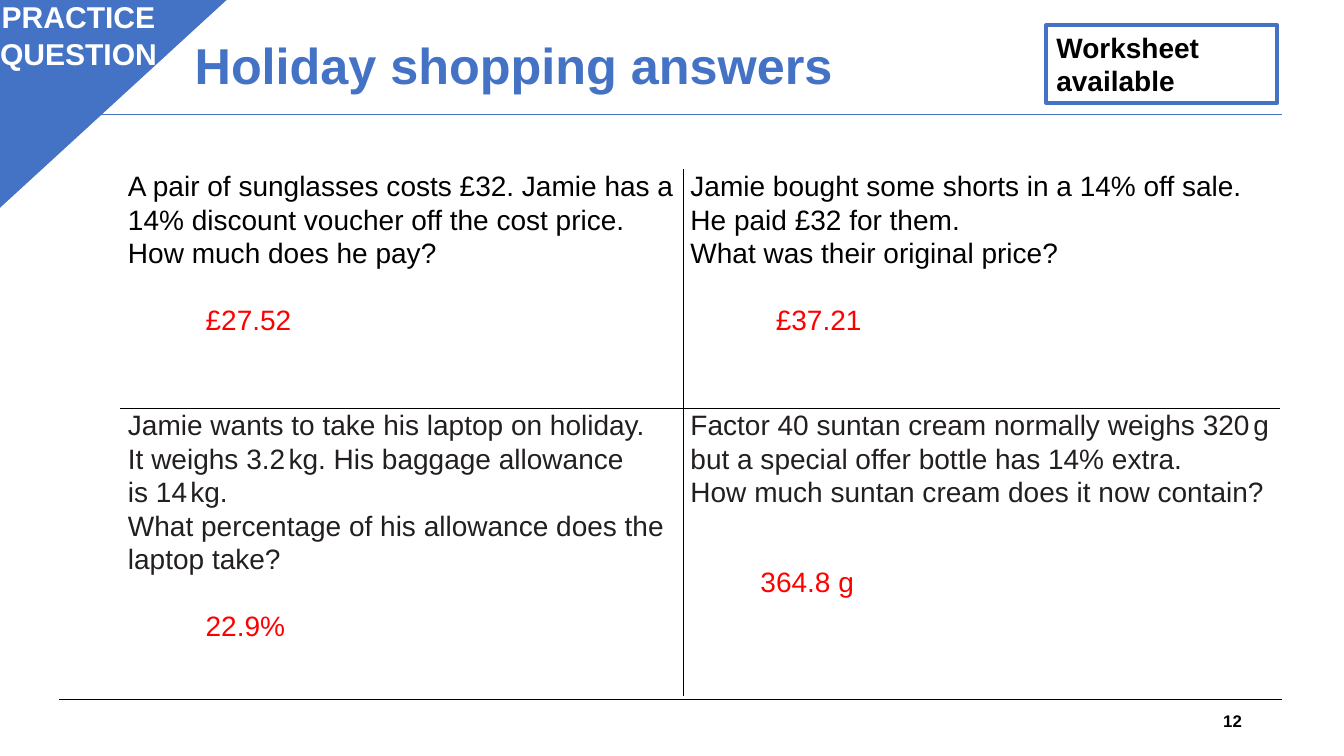
from lxml import etree
from pptx import Presentation
from pptx import util as u
from pptx.dml import color
from pptx.enum import shapes, text
from pptx.oxml import ns

COLORS = {"blue": "4472C4", "black": "000000", "ink": "231F20",
          "answer": "FF0000", "white": "FFFFFF"}
ALIGN = text.PP_ALIGN
ANCHOR = text.MSO_ANCHOR

# Per question: colour, paragraphs, answer, answer indent, space above answer
# "_" marks the narrow gap between a number and its unit
QUESTIONS = [
    [("black", ["A pair of sunglasses costs £32. Jamie has a 14% discount "
                "voucher off the cost price.",
                "How much does he pay?"], "£27.52", 55.5, 24),
     ("black", ["Jamie bought some shorts in a 14% off sale. He paid £32 for them.",
                "What was their original price?"], "£37.21", 61, 24)],
    [("ink", ["Jamie wants to take his laptop on holiday.",
              "It weighs 3.2_kg. His baggage allowance\nis 14_kg.",
              "What percentage of his allowance does the laptop take?"],
      "22.9%", 55.5, 24),
     ("ink", ["Factor 40 suntan cream normally weighs 320_g but a special "
              "offer bottle has 14% extra.",
              "How much suntan cream does it now contain?"], "364.8 g", 50, 40)],
]


class PracticeSlide:
    font = "Arial"

    def __init__(self, deck):
        self.slide = deck.slides.add_slide(deck.slide_layouts[5])
        self.shapes = self.slide.shapes

    def rgb(self, name):
        return color.RGBColor.from_string(COLORS[name])

    def style(self, run, size, name, bold=False):
        run.font.name = self.font
        run.font.size = u.Pt(size)
        run.font.bold = bold
        run.font.color.rgb = self.rgb(name)

    def wording(self, shape, words, size, name, align=ALIGN.LEFT, anchor=ANCHOR.TOP):
        frame = shape.text_frame
        frame.word_wrap = True
        frame.vertical_anchor = anchor
        frame.text = words
        for line in frame.paragraphs:
            line.alignment = align
            for run in line.runs:
                self.style(run, size, name, bold=True)

    def title(self, words, box):
        heading = self.shapes.title
        heading.left, heading.top, heading.width, heading.height = map(u.Pt, box)
        self.wording(heading, words, 36, "blue", anchor=ANCHOR.MIDDLE)
        heading.text_frame.paragraphs[0].line_spacing = 0.9

    def label(self, words, box, size, name, align, anchor=ANCHOR.TOP):
        note = self.shapes.add_textbox(*map(u.Pt, box))
        self.wording(note, words, size, name, align, anchor)

    def rule(self, left, right, y, name):
        line = self.shapes.add_connector(shapes.MSO_CONNECTOR.STRAIGHT,
                                         *map(u.Pt, (left, y, right, y)))
        line.line.color.rgb = self.rgb(name)
        line.line.width = u.Pt(0.75)
        etree.SubElement(line._element.spPr, ns.qn("a:effectLst"))

    def panel(self, kind, box, width, fill=None):
        panel = self.shapes.add_shape(kind, *map(u.Pt, box))
        panel.shadow.inherit = False
        if fill:
            panel.fill.solid()
            panel.fill.fore_color.rgb = self.rgb(fill)
        else:
            panel.fill.background()
        panel.line.color.rgb = self.rgb("blue")
        panel.line.width = u.Pt(width)
        return panel

    def corner(self, box):
        flag = self.panel(shapes.MSO_SHAPE.ISOSCELES_TRIANGLE, box, 1, "blue")
        flag.adjustments[0] = 0
        flag._element.spPr.find(ns.qn("a:xfrm")).set("flipV", "1")

    def border(self, cell, sides):
        props = cell._tc.get_or_add_tcPr()
        for place, side in enumerate(sides):
            edge = etree.Element(ns.qn(f"a:ln{side}"), w=str(u.Pt(1)))
            fill = etree.SubElement(edge, ns.qn("a:solidFill"))
            etree.SubElement(fill, ns.qn("a:srgbClr"), val=COLORS["black"])
            props.insert(place, edge)

    def question(self, cell, name, lines, answer, indent, gap):
        cell.fill.background()
        cell.margin_left = cell.margin_right = u.Pt(5)
        cell.margin_top = cell.margin_bottom = 0
        frame = cell.text_frame
        for number, words in enumerate(lines + [answer]):
            line = frame.add_paragraph() if number else frame.paragraphs[0]
            line.line_spacing = 1.07
            self.spaced_units(line, words)
            for run in line.runs:
                self.style(run, 8 if run.text == " " else 20, name)
        # The last paragraph is the answer
        self.style(line.runs[0], 20, "answer")
        line.space_before = u.Pt(gap)
        props = line._p.get_or_add_pPr()
        props.set("marL", str(u.Pt(indent)))
        props.set("indent", "0")

    def spaced_units(self, line, words):
        for row, part in enumerate(words.split("\n")):
            if row:
                line.add_line_break()
            for piece in part.replace("_", "_ _").split("_"):
                line.add_run().text = piece

    def grid(self, questions, left, top, widths, heights):
        box = (left, top, sum(widths), sum(heights))
        table = self.shapes.add_table(len(heights), len(widths),
                                      *map(u.Pt, box)).table
        table.first_row = table.horz_banding = False
        for column, width in zip(table.columns, widths):
            column.width = u.Pt(width)
        for row, height in zip(table.rows, heights):
            row.height = u.Pt(height)
        for r, entries in enumerate(questions):
            for c, entry in enumerate(entries):
                cell = table.cell(r, c)
                self.question(cell, *entry)
                # Only the inner edges are ruled
                self.border(cell, ("L" if c else "R", "T" if r else "B"))


def main():
    deck = Presentation()
    deck.slide_width, deck.slide_height = u.Pt(960), u.Pt(540)
    page = PracticeSlide(deck)

    # Header and footer
    page.rule(42.5, 916, 499.7, "black")
    page.rule(42.5, 916, 82, "blue")
    page.title("Holiday shopping answers", (131.8, 8.6, 720, 80))
    page.label("12", (678.2, 500.4, 216, 28.8), 12, "black",
               ALIGN.RIGHT, ANCHOR.MIDDLE)

    # Corner flag
    page.corner((-2.2, -1.4, 164.9, 151.2))
    page.label("PRACTICE QUESTION", (-20.2, -4.3, 152.6, 60.5), 21.5, "white",
               ALIGN.CENTER)

    # Worksheet badge
    badge = page.panel(shapes.MSO_SHAPE.RECTANGLE, (747.4, 18, 164.9, 55.4), 3)
    page.wording(badge, "Worksheet\vavailable", 20, "black")

    # Questions with answers
    page.grid(QUESTIONS, 86.4, 121, (401.8, 425.5), (170.6, 205.9))

    deck.save("out.pptx")


if __name__ == "__main__":
    main()
